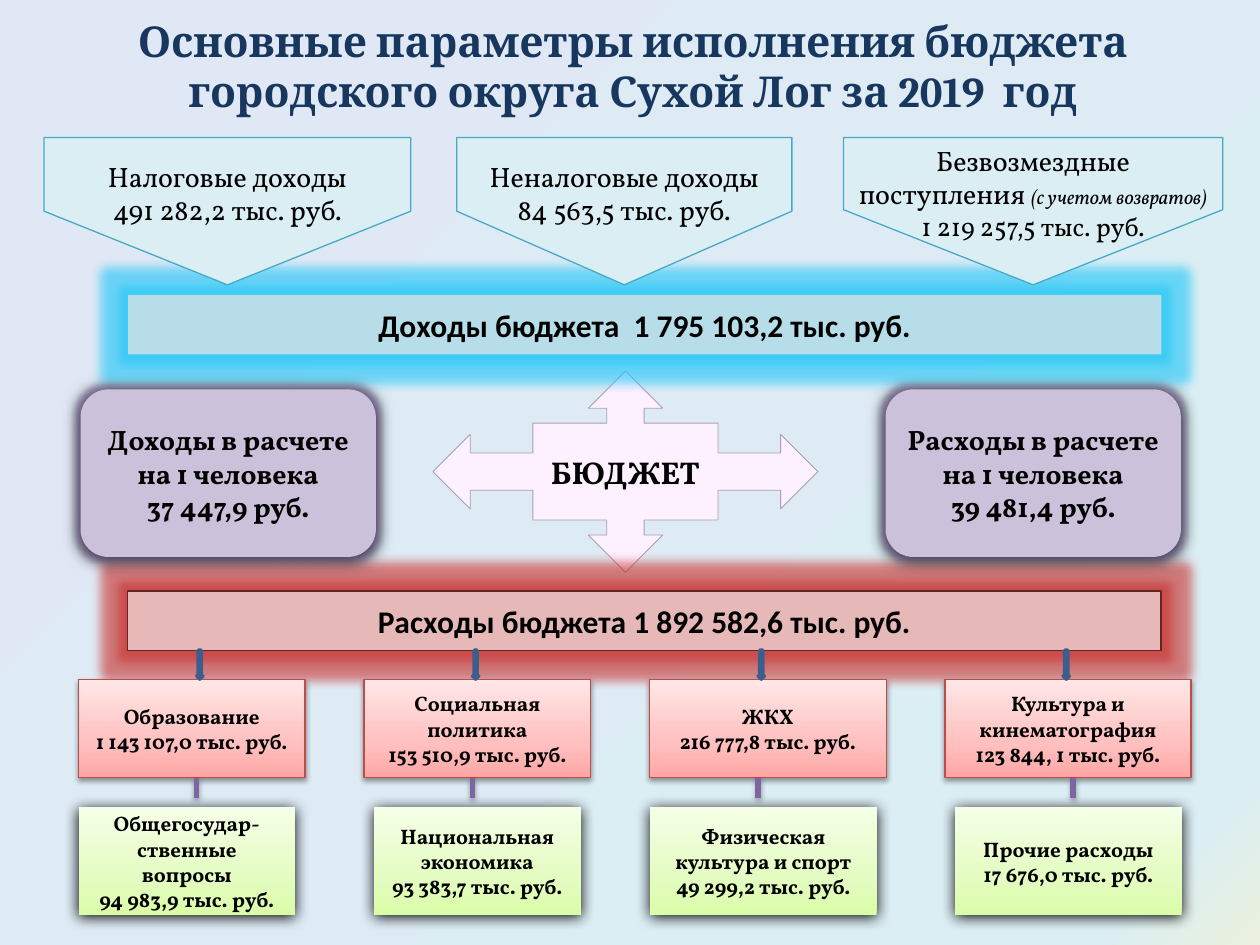
from lxml import etree
from pptx import Presentation
from pptx.dml.color import RGBColor
from pptx.enum import shapes, text
from pptx.oxml.ns import qn
from pptx.util import Pt

BLACK = RGBColor(0x00, 0x00, 0x00)
NAVY = RGBColor(0x17, 0x37, 0x5E)
ICE = RGBColor(0xDB, 0xEE, 0xF4)
TEAL = RGBColor(0x46, 0xAA, 0xC5)
AQUA = RGBColor(0xB7, 0xDE, 0xE8)
CYAN_GLOW = RGBColor(0x1E, 0xC6, 0xF7)
ROSE = RGBColor(0xE6, 0xB9, 0xB8)
MAROON = RGBColor(0x63, 0x25, 0x23)
RED_GLOW = RGBColor(0xC8, 0x2E, 0x2B)
LILAC = RGBColor(0xCC, 0xC1, 0xDA)
PURPLE = RGBColor(0x80, 0x64, 0xA2)
PALE_PINK = RGBColor(0xFD, 0xF0, 0xFF)
GREY = RGBColor(0xA6, 0xA0, 0xB0)
RED = RGBColor(0xBF, 0x4C, 0x48)
BLUE = RGBColor(0x4F, 0x81, 0xBD)
DARK_BLUE = RGBColor(0x3A, 0x5F, 0x8C)

# Gradient stops: position in percent, colour
BACKDROP = [(0, RGBColor(0xEB, 0xF1, 0xDE)), (8, ICE), (100, RGBColor(0xE1, 0xE8, 0xF5))]
PINKS = [(0, RGBColor(0xFF, 0xA6, 0xA5)), (35, RGBColor(0xFF, 0xC0, 0xBF)),
         (100, RGBColor(0xFF, 0xE7, 0xE7))]
GREENS = [(0, RGBColor(0xDA, 0xFD, 0xA7)), (35, RGBColor(0xE4, 0xFC, 0xC2)),
          (100, RGBColor(0xF5, 0xFF, 0xE7))]

# Shadows: opacity in percent, blur, distance
SOFT = (38, 3.1, 1.6)
DEEP = (100, 8.5, 1)

TITLE = "Основные параметры исполнения бюджета\vгородского округа Сухой Лог за 2019  год"

# Income sources: left, width, point length, paragraphs of (text, size, italic) runs
SOURCES = [
    (25.2, 209.5, 0.5, [[("Налоговые доходы", 16, False)],
                        [("491 282,2 тыс. руб.", 16, False)]]),
    (261, 191.5, 0.5, [[("Неналоговые доходы", 16, False)],
                       [("84 563,5 тыс. руб.", 16, False)]]),
    (482, 216.7, 0.51, [[("Безвозмездные поступления ", 16, False),
                         ("(с учетом возвратов)", 11.5, True)],
                        [("1 219 257,5 тыс. руб.", 15, False)]]),
]
# Totals: text, left, top, fill, line, glow
TOTALS = [
    ("Доходы бюджета  1 795 103,2 тыс. руб.", 73.2, 168.5, AQUA, None, CYAN_GLOW),
    ("Расходы бюджета 1 892 582,6 тыс. руб.", 72.9, 337.7, ROSE, MAROON, RED_GLOW),
]
PER_PERSON = [
    (46, "Доходы в расчете\nна 1 человека\n37 447,9 руб."),
    (506, "Расходы в расчете\nна 1 человека\n39 481,4 руб."),
]
# Spending cards: left, width, text
UPPER_CARDS = [
    (44.8, 129.6, "Образование\n1 143 107,0 тыс. руб."),
    (208, 129.6, "Социальная политика\n153 510,9 тыс. руб."),
    (371.2, 135.2, "ЖКХ\n216 777,8 тыс. руб."),
    (540, 140.6, "Культура и кинематография\n123 844, 1 тыс. руб."),
]
LOWER_CARDS = [
    (45, 123.5, "Общегосудар-\nственные вопросы\n94 983,9 тыс. руб."),
    (213.7, 118.2, "Национальная экономика\n93 383,7 тыс. руб."),
    (371.5, 129.4, "Физическая культура и спорт\n49 299,2 тыс. руб."),
    (545.8, 129.4, "Прочие расходы\n17 676,0 тыс. руб."),
]
CARD_ROWS = [(UPPER_CARDS, 388.4, 56, PINKS, RED, SOFT),
             (LOWER_CARDS, 461.3, 61.7, GREENS, None, DEEP)]
ARROW_LEFTS = [112.4, 270, 433.2, 607.5]
LINK_XS = [112.4, 270, 433.2, 613.2]


def set_gradient(fill, owner, stops, angle):
    fill.gradient()
    fill.gradient_angle = angle
    stop_list = next(owner.iter(qn("a:gsLst")))
    for stop in list(stop_list):
        stop_list.remove(stop)
    for position, color in stops:
        stop = etree.SubElement(stop_list, qn("a:gs"), pos=str(position * 1000))
        etree.SubElement(stop, qn("a:srgbClr"), val=str(color))


def add_effect(effects, kind, color, opacity, **settings):
    effect = etree.SubElement(effects, qn("a:" + kind),
                              {key: str(value) for key, value in settings.items()})
    tint = etree.SubElement(effect, qn("a:srgbClr"), val=str(color))
    etree.SubElement(tint, qn("a:alpha"), val=str(opacity * 1000))


def set_effects(properties, glow=None, shadow=None):
    effects = properties.find(qn("a:effectLst"))
    if effects is None:
        effects = etree.SubElement(properties, qn("a:effectLst"))
    if glow:
        color, opacity, radius = glow
        add_effect(effects, "glow", color, opacity, rad=int(Pt(radius)))
    if shadow:
        opacity, blur, distance = shadow
        add_effect(effects, "outerShdw", BLACK, opacity, blurRad=int(Pt(blur)),
                   dist=int(Pt(distance)), dir=5400000, rotWithShape=0)


def add_box(kind, left, top, width, height, fill, line=None, weight=0.75,
            glow=None, shadow=None):
    box = slide.shapes.add_shape(kind, Pt(left), Pt(top), Pt(width), Pt(height))
    if isinstance(fill, list):
        set_gradient(box.fill, box.element.spPr, fill, 90)
    else:
        box.fill.solid()
        box.fill.fore_color.rgb = fill
    if line is None:
        box.line.fill.background()
    else:
        box.line.color.rgb = line
        box.line.width = Pt(weight)
    box.shadow.inherit = False
    set_effects(box.element.spPr, glow, shadow)
    return box


def style_run(run, size, font="Vollkorn", bold=True, color=BLACK, italic=False):
    run.font.name, run.font.size = font, Pt(size)
    run.font.bold, run.font.italic = bold, italic
    run.font.color.rgb = color


def write(box, words, size, **style):
    frame = box.text_frame
    frame.word_wrap = True
    frame.vertical_anchor = text.MSO_ANCHOR.MIDDLE
    frame.text = words
    for paragraph in frame.paragraphs:
        paragraph.alignment = text.PP_ALIGN.CENTER
        for run in paragraph.runs:
            style_run(run, size, **style)


deck = Presentation()
deck.slide_width, deck.slide_height = Pt(720), Pt(540)
slide = deck.slides.add_slide(deck.slide_layouts[6])
set_gradient(slide.background.fill, slide.element, BACKDROP, 135)

# Title
title = slide.shapes.add_textbox(Pt(39.6), Pt(12.5), Pt(644.4), Pt(50.4))
write(title, TITLE, 24.3, font="Cambria", color=NAVY)
title.text_frame.paragraphs[0].line_spacing = Pt(28.8)

# Centre callout and the two totals
budget = add_box(shapes.MSO_SHAPE.QUAD_ARROW_CALLOUT, 247.4, 212, 220, 115,
                 PALE_PINK, GREY, 0.5)
write(budget, "БЮДЖЕТ", 18)
for words, left, top, fill, line, glow in TOTALS:
    total = add_box(shapes.MSO_SHAPE.RECTANGLE, left, top, 590.5, 34, fill, line,
                    glow=(glow, 60, 11))
    write(total, words, 18, font="Calibri")

# Income sources: pentagons turned to point down, with upright text
DEPTH, SOURCE_TOP = 84.2, 78.6
for left, width, point, paragraphs in SOURCES:
    turn = (width - DEPTH) / 2
    source = add_box(shapes.MSO_SHAPE.PENTAGON, left + turn, SOURCE_TOP - turn,
                     DEPTH, width, ICE, TEAL)
    source.rotation = 90
    source.adjustments[0] = point
    frame = source.text_frame
    write(source, "\n" * (len(paragraphs) - 1), 16)
    frame._txBody.bodyPr.set("vert", "vert270")
    for paragraph, runs in zip(frame.paragraphs, paragraphs):
        for words, size, italic in runs:
            run = paragraph.add_run()
            run.text = words
            style_run(run, size, bold=False, italic=italic)

# Amounts per person
for left, words in PER_PERSON:
    person = add_box(shapes.MSO_SHAPE.ROUNDED_RECTANGLE, left, 222.5, 168.8, 95.8,
                     LILAC, glow=(PURPLE, 40, 5), shadow=DEEP)
    write(person, words, 16)

# Spending cards
for cards, top, height, fill, line, shadow in CARD_ROWS:
    for left, width, words in cards:
        card = add_box(shapes.MSO_SHAPE.PENTAGON, left, top, width, height, fill,
                       line, shadow=shadow)
        card.adjustments[0] = 0
        write(card, words, 12)

# Arrows from the spending total and links between the card rows
for left in ARROW_LEFTS:
    add_box(shapes.MSO_SHAPE.DOWN_ARROW, left, 371.6, 3.6, 16.5, BLUE, DARK_BLUE, 2)
for x in LINK_XS:
    link = slide.shapes.add_connector(shapes.MSO_CONNECTOR.STRAIGHT,
                                      Pt(x), Pt(444.4), Pt(x), Pt(455.8))
    link.line.color.rgb = PURPLE
    link.line.width = Pt(3)
    set_effects(link._element.spPr, shadow=(35, 3.1, 1.8))

deck.save("out.pptx")
